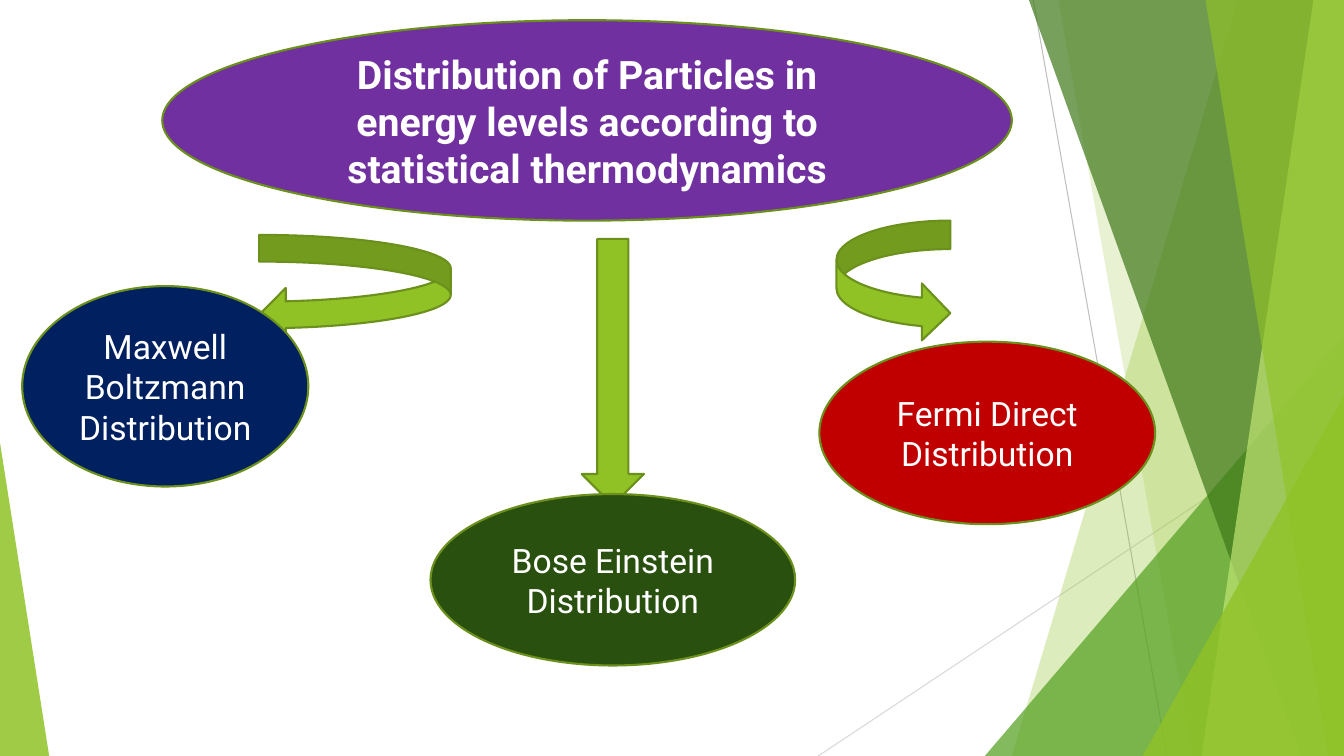
from dataclasses import dataclass

from lxml import etree
from pptx import Presentation
from pptx.dml.color import RGBColor
from pptx.enum.shapes import MSO_CONNECTOR, MSO_SHAPE
from pptx.enum.text import MSO_ANCHOR, MSO_AUTO_SIZE, PP_ALIGN
from pptx.oxml.ns import qn
from pptx.util import Cm, Pt

ELLIPSE = MSO_SHAPE.OVAL
TRIANGLE = MSO_SHAPE.ISOSCELES_TRIANGLE
STRAIGHT = MSO_CONNECTOR.STRAIGHT
CENTER = PP_ALIGN.CENTER
MIDDLE = MSO_ANCHOR.MIDDLE
NO_FIT = MSO_AUTO_SIZE.NONE


@dataclass(frozen=True)
class Theme:
    font: str = "Roboto"
    title_size: int = 28
    label_size: int = 24
    text: str = "FFFFFF"
    outline: str = "6B901C"
    lime: str = "90C226"
    pale_lime: str = "C0E474"
    leaf: str = "54A021"
    forest: str = "3F7819"
    purple: str = "7030A0"
    navy: str = "002060"
    dark_green: str = "2A5010"
    red: str = "C00000"
    grey: str = "BFBFBF"
    light_grey: str = "D9D9D9"


theme = Theme()
WIDTH, HEIGHT = 33.87, 19.05


def paint(shape, fill, opacity=None):
    """Solid fill; see-through shapes have no outline."""
    shape.shadow.inherit = False
    shape.fill.solid()
    shape.fill.fore_color.rgb = RGBColor.from_string(fill)
    if opacity is None:
        shape.line.color.rgb = RGBColor.from_string(theme.outline)
        shape.line.width = Pt(1.5)
    else:
        shape.line.fill.background()
        color = shape.fill._xPr.find(qn("a:solidFill"))[0]
        etree.SubElement(color, qn("a:alpha"), val=str(opacity * 1000))


def write(shape, text, size, bold=False):
    frame = shape.text_frame
    frame.word_wrap = True
    frame.auto_size = NO_FIT
    frame.vertical_anchor = MIDDLE
    para = frame.paragraphs[0]
    para.alignment = CENTER
    span = para.add_run()
    span.text = text
    span.font.name = theme.font
    span.font.size = Pt(size)
    span.font.bold = bold
    span.font.color.rgb = RGBColor.from_string(theme.text)


deck = Presentation()
deck.slide_width, deck.slide_height = Cm(WIDTH), Cm(HEIGHT)
page = deck.slides.add_slide(deck.slide_layouts[5])
shapes = page.shapes

# Thin background lines
for ends, color in [
    ((26.04, 0, 29.41, HEIGHT), theme.grey),
    ((WIDTH, 10.24, 20.62, HEIGHT), theme.light_grey),
]:
    line = shapes.add_connector(STRAIGHT, *map(Cm, ends))
    line.line.color.rgb = RGBColor.from_string(color)
    line.line.width = Pt(0.75)
    etree.SubElement(line._element.spPr, qn("a:effectLst"))

# Background facets, back to front
# band: top x, foot x; triangle: left, top, width, apex (0 left, 1 right)
for kind, place, color, opacity in [
    ("band", (31.19, 25.5), theme.lime, 30),
    ("band", (26.67, 30.05), theme.lime, 20),
    ("triangle", (24.82, 8.46, 9.05, 1), theme.leaf, 72),
    ("band", (25.93, 32.79), theme.forest, 70),
    ("band", (33.1, 30.28), theme.pale_lime, 70),
    ("band", (30.38, 33.48), theme.lime, 65),
    ("triangle", (28.8, 9.98, 5.07, 1), theme.lime, 80),
    ("triangle", (0, 11.15, 1.24, 0), theme.lime, 85),
]:
    if kind == "band":
        top_x, foot_x = place
        corners = [(WIDTH, 0), (WIDTH, HEIGHT), (foot_x, HEIGHT)]
        outline = shapes.build_freeform(Cm(top_x), 0)
        outline.add_line_segments([(Cm(x), Cm(y)) for x, y in corners])
        facet = outline.convert_to_shape()
    else:
        left, top, width, apex = place
        facet = shapes.add_shape(TRIANGLE, Cm(left), Cm(top), Cm(width), Cm(HEIGHT - top))
        facet.adjustments[0] = apex
    paint(facet, color, opacity)

# Title on its ellipse
backdrop = shapes.add_shape(ELLIPSE, Cm(4.09), Cm(0.51), Cm(21.41), Cm(5.05))
paint(backdrop, theme.purple)
title = shapes.title
title.left, title.top, title.width, title.height = Cm(7.23), Cm(1.25), Cm(15.13), Cm(3.57)
write(
    title,
    "Distribution of Particles in energy levels according to statistical thermodynamics",
    theme.title_size,
    bold=True,
)
backdrop._element.addnext(title._element)

# Arrows to the three distributions
for preset, box in [
    (MSO_SHAPE.DOWN_ARROW, (14.66, 6.02, 1.57, 6.71)),
    (MSO_SHAPE.CURVED_LEFT_ARROW, (6.53, 5.92, 4.83, 2.69)),
    (MSO_SHAPE.CURVED_RIGHT_ARROW, (21.08, 5.56, 2.87, 3.05)),
]:
    paint(shapes.add_shape(preset, *map(Cm, box)), theme.lime)

# Distributions
for text, box, color in [
    ("Maxwell Boltzmann Distribution", (0.56, 7.21, 7.21, 5.05), theme.navy),
    ("Bose Einstein Distribution", (10.85, 12.45, 9.19, 4.32), theme.dark_green),
    ("Fermi Direct Distribution", (20.65, 8.61, 8.46, 4.6), theme.red),
]:
    bubble = shapes.add_shape(ELLIPSE, *map(Cm, box))
    paint(bubble, color)
    write(bubble, text, theme.label_size)

deck.save("out.pptx")
